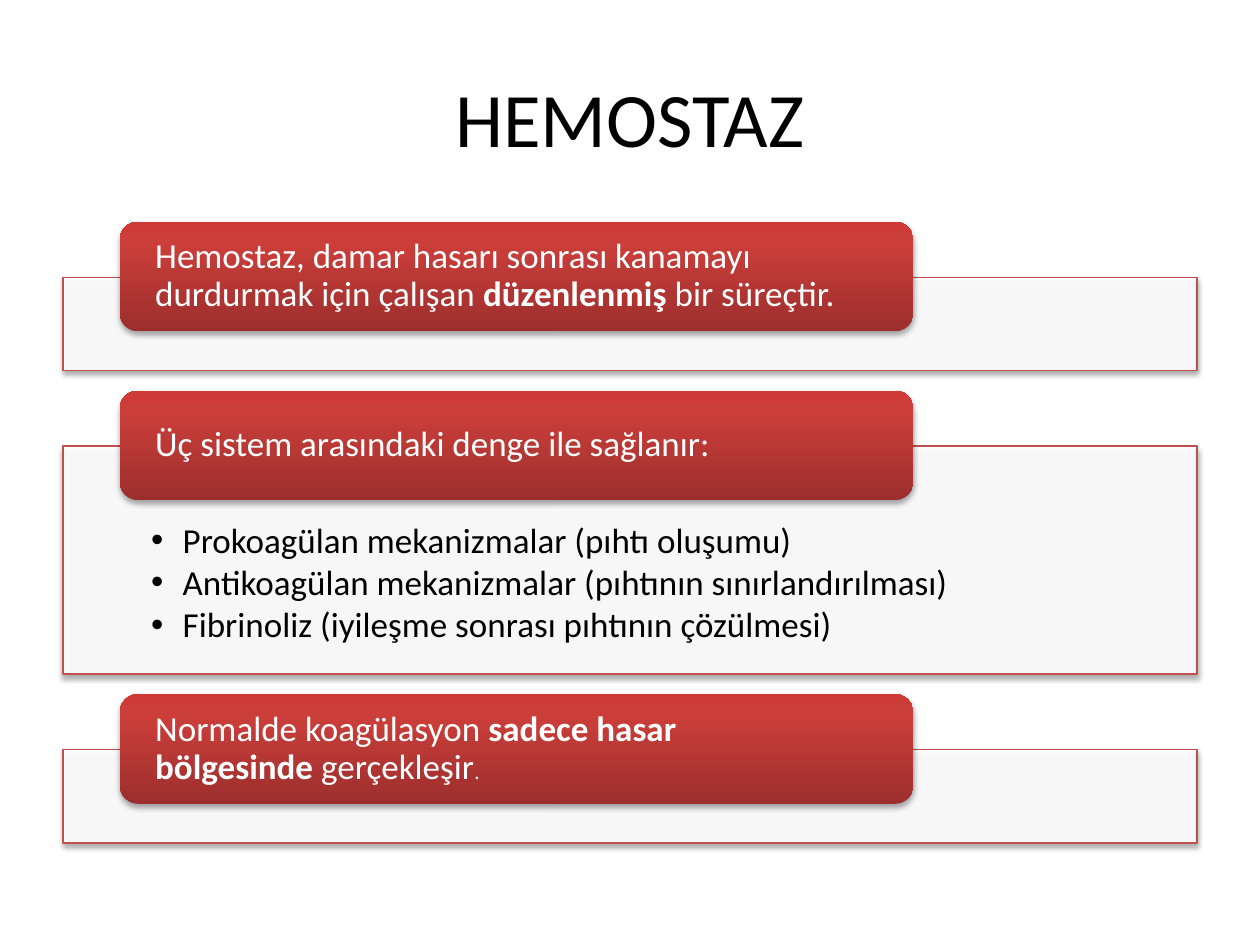
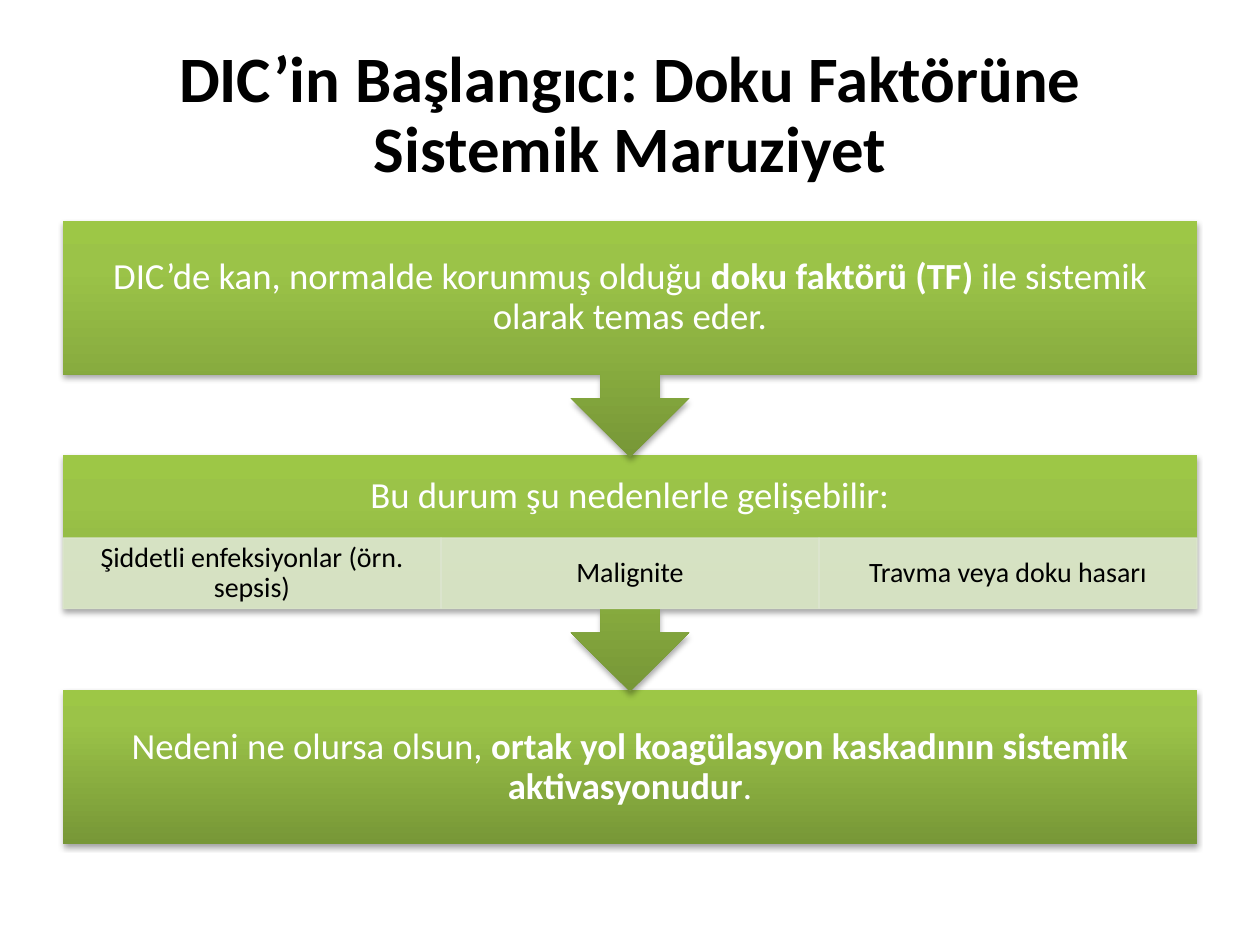
from dataclasses import dataclass
from lxml.etree import SubElement as Sub
from pptx import Presentation
from pptx.dml.color import RGBColor as Rgb
from pptx.enum.shapes import MSO_SHAPE as Kind
from pptx.enum.text import MSO_ANCHOR as Anchor, MSO_AUTO_SIZE as Fit, PP_ALIGN as Align
from pptx.oxml.ns import qn
from pptx.shapes.autoshape import Shape
from pptx.slide import Slide
from pptx.util import Inches, Pt

FONT = "Calibri"
NB = chr(160)
LEFT, WIDTH = 0.5, 9
COLORS = {
    "black": "000000",
    "white": "FFFFFF",
    "edge": "C0504D",
    "cell": "DEE7D1",
}
RED = {0: "9C2F2D", 80: "CB3E3A", 100: "CE3B37"}
GREEN = {0: "779737", 80: "9BC348", 100: "9DC746"}


@dataclass
class Run:
    text: str
    bold: bool = False
    size: float | None = None


@dataclass
class Box:
    left: float
    top: float
    width: float
    height: float

    def place(self) -> tuple:
        return tuple(Inches(v) for v in (self.left, self.top, self.width, self.height))


@dataclass
class Style:
    size: float
    color: str
    align: Align
    pad: tuple[float, float, float, float]
    anchor: Anchor = Anchor.MIDDLE


@dataclass
class Card:
    top: float
    height: float
    runs: list[Run]


@dataclass
class Step:
    top: float
    head: float
    runs: list[Run]
    arrow: bool = True


TAB = Style(20, "white", Align.LEFT, (0.24, 0, 0.24, 0))
LIST = Style(20, "black", Align.LEFT, (0.7, 0.61, 0.7, 0.16), Anchor.TOP)
BAND = Style(21, "white", Align.CENTER, (0.16, 0.16, 0.16, 0.16))
CELL = Style(16, "black", Align.CENTER, (0.12, 0.02, 0.12, 0.02))

CARDS = [
    Card(1.76, 0.74, [
        Run("Hemostaz, damar hasarı sonrası kanamayı durdurmak için çalışan" + NB),
        Run("düzenlenmiş", True),
        Run(NB + "bir süreçtir."),
    ]),
    Card(3.1, 1.81, [Run("Üç sistem arasındaki denge ile sağlanır:")]),
    Card(5.51, 0.74, [
        Run("Normalde koagülasyon" + NB),
        Run("sadece hasar bölgesinde", True),
        Run(NB + "gerçekleşir"),
        Run(".", size=12),
    ]),
]
POINTS = [
    "Prokoagülan mekanizmalar (pıhtı oluşumu)",
    "Antikoagülan mekanizmalar (pıhtının sınırlandırılması)",
    "Fibrinoliz (iyileşme sonrası pıhtının çözülmesi)",
]
STEPS = [
    Step(1.75, 1.22, [
        Run("DIC’de kan, normalde korunmuş olduğu" + NB),
        Run("doku faktörü (TF)", True),
        Run(NB + "ile sistemik olarak temas eder."),
    ]),
    Step(3.61, 0.66, [Run("Bu durum şu nedenlerle gelişebilir:")]),
    Step(5.48, 1.22, [
        Run("Nedeni ne olursa olsun," + NB),
        Run("ortak yol koagülasyon kaskadının sistemik aktivasyonudur", True),
        Run("."),
    ], arrow=False),
]
CAUSES = ["Şiddetli enfeksiyonlar (örn. sepsis)", "Malignite", "Travma veya doku hasarı"]


def tint(shape: Shape, color: str, edge: str) -> None:
    shape.fill.solid()
    shape.fill.fore_color.rgb = Rgb.from_string(COLORS[color])
    shape.line.color.rgb = Rgb.from_string(COLORS[edge])
    shape.line.width = Pt(0.75)
    shape.shadow.inherit = False
    fill = shape.element.spPr.find(qn("a:solidFill"))
    Sub(fill[0], qn("a:alpha"), val="90000")


def blend(shape: Shape, stops: dict[int, str]) -> None:
    shape.fill.gradient()
    shape.fill.gradient_angle = 90
    shape.line.fill.background()
    grad = shape.element.spPr.find(qn("a:gradFill"))
    grad.set("rotWithShape", "0")
    ramp = grad.find(qn("a:gsLst"))
    for old in list(ramp):
        ramp.remove(old)
    for pos, color in stops.items():
        stop = Sub(ramp, qn("a:gs"), pos=str(pos * 1000))
        Sub(stop, qn("a:srgbClr"), val=color)


def shade(shape: Shape) -> None:
    shape.shadow.inherit = False
    fx = shape.element.spPr.find(qn("a:effectLst"))
    drop = Sub(fx, qn("a:outerShdw"), blurRad=str(Pt(3.1)), dist=str(Pt(1.8)),
               dir="5400000", rotWithShape="0")
    color = Sub(drop, qn("a:srgbClr"), val=COLORS["black"])
    Sub(color, qn("a:alpha"), val="35000")


def write(shape: Shape, paras: list[list[Run]], style: Style) -> None:
    frame = shape.text_frame
    frame.word_wrap = True
    frame.auto_size = Fit.NONE
    frame.vertical_anchor = style.anchor
    pads = [Inches(v) for v in style.pad]
    frame.margin_left, frame.margin_top, frame.margin_right, frame.margin_bottom = pads
    for i, runs in enumerate(paras):
        para = frame.paragraphs[0] if i == 0 else frame.add_paragraph()
        para.alignment = style.align
        para.line_spacing = 0.9
        para.space_before = Pt(0)
        para.font.name = FONT
        para.font.size = Pt(style.size)
        para.font.color.rgb = Rgb.from_string(COLORS[style.color])
        for run in runs:
            part = para.add_run()
            part.text = run.text
            if run.bold:
                part.font.bold = True
            if run.size:
                part.font.size = Pt(run.size)


def head(slide: Slide, text: str, size: float, bold: bool, space: float) -> None:
    title = slide.shapes.title
    box = Box(LEFT, 0.3, WIDTH, 1.25)
    title.left, title.top, title.width, title.height = box.place()
    title.text_frame.text = text
    title.text_frame.auto_size = Fit.NONE
    title.text_frame.vertical_anchor = Anchor.MIDDLE
    para = title.text_frame.paragraphs[0]
    para.alignment = Align.CENTER
    para.line_spacing = space
    para.font.name = FONT
    para.font.size = Pt(size)
    para.font.bold = bold
    para.font.color.rgb = Rgb.from_string(COLORS["black"])


def points(body: Shape) -> None:
    write(body, [[Run(text)] for text in POINTS], LIST)
    for para in body.text_frame.paragraphs:
        para.space_after = Pt(2.5)
        props = para._p.get_or_add_pPr()
        props.set("marL", str(Inches(0.25)))
        props.set("indent", str(Inches(-0.25)))


def cards(slide: Slide) -> None:
    body = slide.placeholders[1]
    for card in CARDS:
        box = Box(LEFT, card.top + 0.44, WIDTH, card.height)
        if card is CARDS[1]:
            panel = body
            panel.left, panel.top, panel.width, panel.height = box.place()
            points(panel)
        else:
            panel = slide.shapes.add_shape(Kind.RECTANGLE, *box.place())
        tint(panel, "white", "edge")
        shade(panel)
        tab = slide.shapes.add_shape(
            Kind.ROUNDED_RECTANGLE, *Box(0.95, card.top, 6.3, 0.87).place())
        blend(tab, RED)
        shade(tab)
        write(tab, [card.runs], TAB)


def steps(slide: Slide) -> None:
    for step in reversed(STEPS):
        kind = Kind.UP_ARROW_CALLOUT if step.arrow else Kind.RECTANGLE
        tall = 1.88 if step.arrow else step.head
        band = slide.shapes.add_shape(kind, *Box(LEFT, step.top, WIDTH, tall).place())
        band.rotation = 180 if step.arrow else 0
        blend(band, GREEN)
        shade(band)
        label = band
        if step.arrow:
            label = slide.shapes.add_textbox(
                *Box(LEFT, step.top, WIDTH, step.head).place())
        write(label, [step.runs], BAND)
        if step is STEPS[1]:
            cells(slide, step.top + step.head)


def cells(slide: Slide, top: float) -> None:
    wide = WIDTH / len(CAUSES)
    for i, cause in enumerate(CAUSES):
        box = Box(LEFT + i * wide, top, wide, 0.56)
        cell = slide.shapes.add_shape(Kind.RECTANGLE, *box.place())
        tint(cell, "cell", "cell")
        edge = cell.element.spPr.find(qn("a:ln")).find(qn("a:solidFill"))
        Sub(edge[0], qn("a:alpha"), val="90000")
        write(cell, [[Run(cause)]], CELL)


def main() -> None:
    deck = Presentation()
    deck.slide_width, deck.slide_height = Inches(10), Inches(7.5)
    first = deck.slides.add_slide(deck.slide_layouts[1])
    head(first, "HEMOSTAZ", 44, False, 1)
    cards(first)
    second = deck.slides.add_slide(deck.slide_layouts[5])
    head(second, "DIC’in Başlangıcı: Doku Faktörüne Sistemik Maruziyet", 37, True, 0.9)
    steps(second)
    deck.save("out.pptx")


if __name__ == "__main__":
    main()
